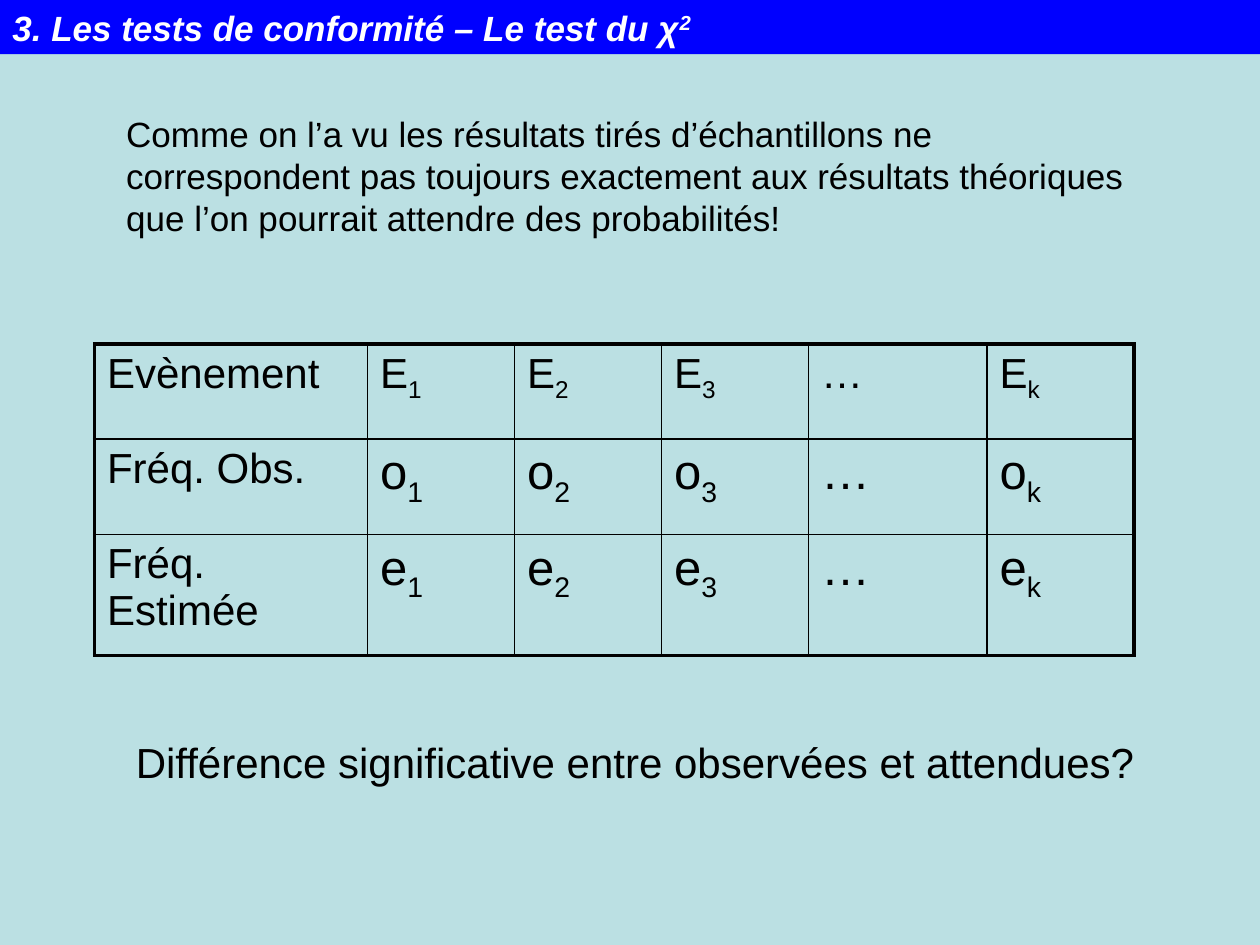
from lxml import etree
from pptx import Presentation
from pptx.dml.color import RGBColor
from pptx.enum.shapes import MSO_SHAPE
from pptx.enum.text import MSO_ANCHOR, MSO_AUTO_SIZE
from pptx.oxml.ns import qn
from pptx.util import Pt

RECTANGLE = MSO_SHAPE.RECTANGLE
MIDDLE = MSO_ANCHOR.MIDDLE
GROW = MSO_AUTO_SIZE.SHAPE_TO_FIT_TEXT

BLACK, WHITE, BLUE, PALE_BLUE = "000000", "FFFFFF", "0000FF", "BBE0E3"
BODY = {"name": "Arial", "size": Pt(20), "color": BLACK}
LABEL = {**BODY, "size": Pt(24)}
SYMBOL = {**BODY, "size": Pt(28)}
HEADING = {**BODY, "color": WHITE, "bold": True, "italic": True}

COLUMN_WIDTHS = [156, 84, 84, 84, 102, 84]
ROW_HEIGHTS = [54.5, 54.5, 69]
INDICES = ["1", "2", "3", None, "k"]
FREQUENCY_ROWS = [
    ("Evènement", "E", LABEL),
    ("Fréq. Obs.", "o", SYMBOL),
    ("Fréq. Estimée", "e", SYMBOL),
]
OUTER_LINE, INNER_LINE = 2.25, 1


def rgb(hex_color):
    return RGBColor.from_string(hex_color)


def add_run(paragraph, text, format_values, baseline=None):
    """Add a run; baseline is a percentage, negative for a subscript."""
    run = paragraph.add_run()
    run.text = text
    for attribute, value in format_values.items():
        if attribute == "color":
            run.font.color.rgb = rgb(value)
        else:
            setattr(run.font, attribute, value)
    if baseline:
        run.font._element.set("baseline", str(baseline * 1000))


def add_statement(slide, box, text, format_values, wrap=True):
    frame = slide.shapes.add_textbox(*map(Pt, box)).text_frame
    frame.word_wrap = wrap
    frame.auto_size = GROW
    add_run(frame.paragraphs[0], text, format_values)


def add_heading_bar(slide, box):
    bar = slide.shapes.add_shape(RECTANGLE, *map(Pt, box))
    bar.shadow.inherit = False
    bar.fill.solid()
    bar.fill.fore_color.rgb = rgb(BLUE)
    bar.line.fill.background()
    frame = bar.text_frame
    frame.word_wrap = True
    frame.vertical_anchor = MIDDLE
    heading = frame.paragraphs[0]
    heading.alignment = 1
    add_run(heading, "3. Les tests de conformité – Le test du χ", HEADING)
    add_run(heading, "2", HEADING, 30)


def set_borders(cell, widths):
    """Draw black left, right, top and bottom borders, widths in points."""
    properties = cell._tc.get_or_add_tcPr()
    for position, (side, width) in enumerate(zip("LRTB", widths)):
        line = etree.Element(qn(f"a:ln{side}"), w=str(Pt(width)))
        fill = etree.SubElement(line, qn("a:solidFill"))
        etree.SubElement(fill, qn("a:srgbClr"), val=BLACK)
        properties.insert(position, line)


def add_frequency_table(slide, left, top):
    row_count, column_count = len(ROW_HEIGHTS), len(COLUMN_WIDTHS)
    table = slide.shapes.add_table(
        row_count, column_count, Pt(left), Pt(top),
        Pt(sum(COLUMN_WIDTHS)), Pt(sum(ROW_HEIGHTS))).table
    table.first_row = table.horz_banding = False
    for column, width in zip(table.columns, COLUMN_WIDTHS):
        column.width = Pt(width)
    for row, height in zip(table.rows, ROW_HEIGHTS):
        row.height = Pt(height)

    for r, (label, symbol, symbol_format) in enumerate(FREQUENCY_ROWS):
        add_run(table.cell(r, 0).text_frame.paragraphs[0], label, LABEL)
        for c, index in enumerate(INDICES, start=1):
            paragraph = table.cell(r, c).text_frame.paragraphs[0]
            add_run(paragraph, symbol if index else "…", symbol_format)
            if index:
                add_run(paragraph, index, symbol_format, -25)
        for c in range(column_count):
            cell = table.cell(r, c)
            cell.fill.background()
            on_edge = (c == 0, c == column_count - 1, r == 0, r == row_count - 1)
            set_borders(cell, [OUTER_LINE if edge else INNER_LINE for edge in on_edge])


def main():
    presentation = Presentation()
    presentation.slide_width, presentation.slide_height = Pt(720), Pt(540)
    slide = presentation.slides.add_slide(presentation.slide_layouts[6])
    slide.background.fill.solid()
    slide.background.fill.fore_color.rgb = rgb(PALE_BLUE)

    add_statement(
        slide, (65, 60.5, 591, 79),
        "Comme on l’a vu les résultats tirés d’échantillons ne correspondent pas "
        "toujours exactement aux résultats théoriques que l’on pourrait attendre "
        "des probabilités!", BODY)
    add_frequency_table(slide, 54, 196.5)
    add_statement(
        slide, (70.5, 417.5, 586, 36),
        "Différence significative entre observées et attendues?", LABEL, wrap=False)
    add_heading_bar(slide, (0, 0, 720, 31))
    presentation.save("out.pptx")


if __name__ == "__main__":
    main()
